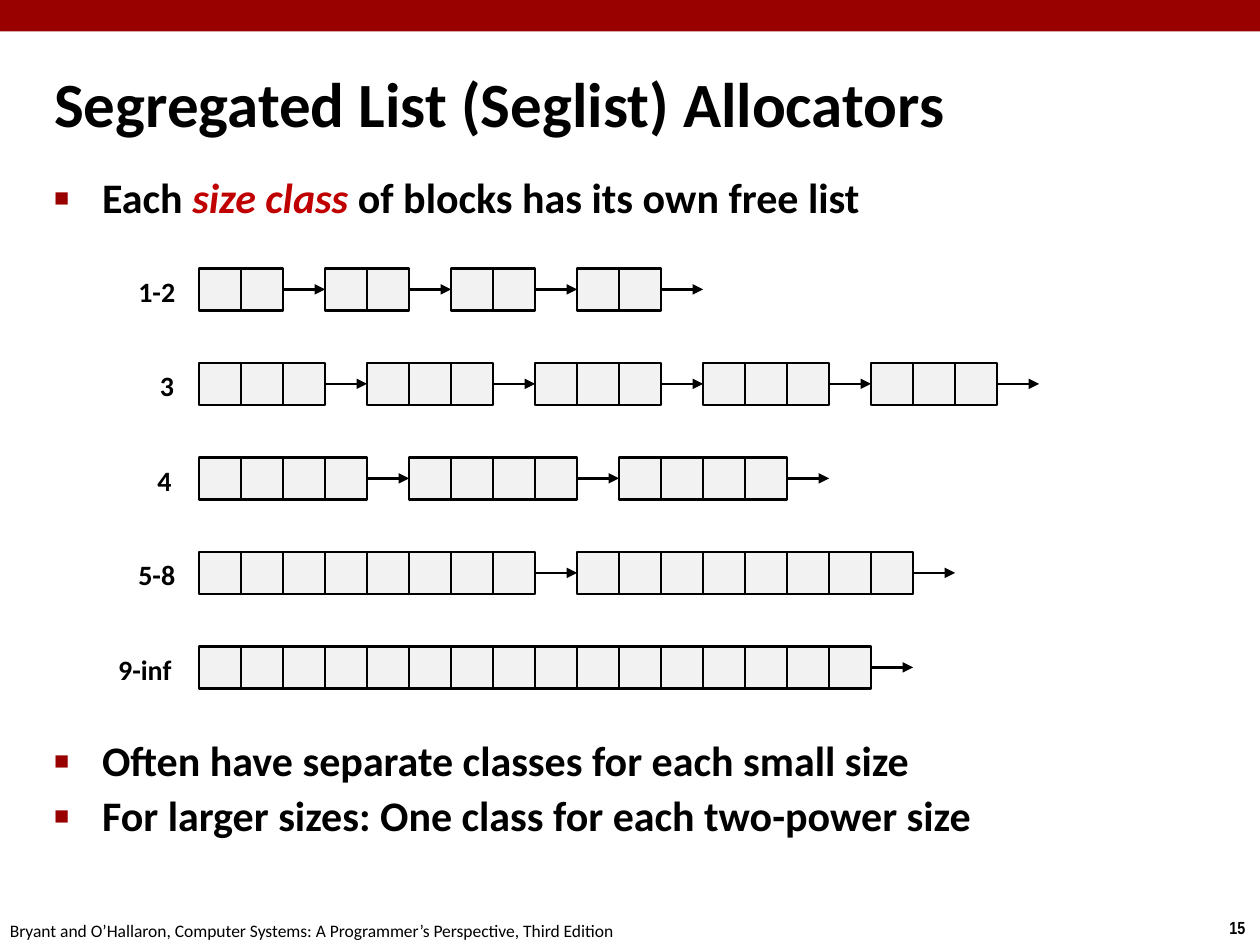
from dataclasses import dataclass

from lxml import etree
from pptx import Presentation
from pptx import util as u
from pptx.dml.color import RGBColor
from pptx.enum import shapes, text
from pptx.oxml import ns

BLACK = RGBColor(0x00, 0x00, 0x00)
MAROON = RGBColor(0x99, 0x00, 0x00)
RED = RGBColor(0xC0, 0x00, 0x00)
GRAY = RGBColor(0xF2, 0xF2, 0xF2)

CELL = u.Inches(1) // 3
LEFT = u.Inches(1.58)
TOP = u.Inches(2.13)
PITCH = u.Inches(0.75)

HEAD = {"name": "Calibri", "size": u.Pt(36), "bold": True}
LIST = {"name": "Calibri", "size": u.Pt(24), "bold": True}
TAG = {"name": "Calibri", "size": u.Pt(16), "bold": True}
FOOT = {"name": "Calibri", "size": u.Pt(10), "bold": False}
PAGE = {"name": "Arial Narrow", "size": u.Pt(10), "bold": True}


@dataclass
class Chain:
    name: str
    left: float
    width: float
    cells: int
    blocks: int


@dataclass
class Point:
    runs: list[str]
    before: float


CHAINS = [
    Chain("1-2", 1, 0.5, 2, 4),
    Chain("3", 1.17, 0.32, 3, 5),
    Chain("4", 1.15, 0.32, 4, 3),
    Chain("5-8", 1, 0.5, 8, 2),
    Chain("9-inf", 0.84, 0.63, 16, 1),
]

POINTS = [
    Point(["Each ", "size class ", "of blocks has its own free list"], 4),
    Point(["Often have separate classes for each small size"], 294.5),
    Point(["For larger sizes: One class for each two-power size"], 4),
]


def style(item, form: dict) -> None:
    for key, value in form.items():
        setattr(item, key, value)


def write(para, words: str, form: dict, color: RGBColor = BLACK) -> None:
    run = para.add_run()
    run.text = words
    style(run.font, form)
    run.font.color.rgb = color


def place(item, left: float, top: float, width: float, height: float) -> None:
    box = {"left": left, "top": top, "width": width, "height": height}
    style(item, {key: u.Inches(value) for key, value in box.items()})


def label(slide, words: str, left: float, top: int, width: float,
          height: float, form: dict) -> None:
    box = slide.shapes.add_textbox(
        u.Inches(left), top, u.Inches(width), u.Inches(height))
    box.text_frame.word_wrap = False
    write(box.text_frame.paragraphs[0], words, form)


def bullet(para) -> None:
    props = para._p.get_or_add_pPr()
    props.set("marL", str(u.Inches(0.38)))
    props.set("indent", str(-u.Inches(0.38)))
    tint = etree.SubElement(props, ns.qn("a:buClr"))
    etree.SubElement(tint, ns.qn("a:srgbClr"), val=str(MAROON))
    etree.SubElement(props, ns.qn("a:buSzPct"), val="60000")
    etree.SubElement(props, ns.qn("a:buFont"), typeface="Arial")
    etree.SubElement(props, ns.qn("a:buChar"), char="■")


def rect(slide, left: int, top: int, width: int, height: int, fill: RGBColor):
    item = slide.shapes.add_shape(
        shapes.MSO_SHAPE.RECTANGLE, left, top, width, height)
    item.shadow.inherit = False
    item.fill.solid()
    item.fill.fore_color.rgb = fill
    item.line.fill.background()
    return item


def cell(slide, left: int, top: int):
    item = rect(slide, left, top, CELL, CELL, GRAY)
    item.line.color.rgb = BLACK
    item.line.width = u.Pt(1.5)
    return item


def arrow(slide, start, end=None) -> None:
    left = start.left + CELL
    mid = start.top + CELL // 2
    item = slide.shapes.add_connector(
        shapes.MSO_CONNECTOR.STRAIGHT, left, mid, left + CELL, mid)
    item.begin_connect(start, 3)
    if end is not None:
        item.end_connect(end, 1)
    item.line.color.rgb = BLACK
    item.line.width = u.Pt(1.5)
    etree.SubElement(item.line._get_or_add_ln(), ns.qn("a:tailEnd"),
                     type="triangle")
    etree.SubElement(item._element.spPr, ns.qn("a:effectLst"))


def draw(slide, chain: Chain, top: int) -> None:
    label(slide, chain.name, chain.left, top, chain.width, 0.37, TAG)
    last = None
    for block in range(chain.blocks):
        left = LEFT + block * (chain.cells + 1) * CELL
        row = [cell(slide, left + n * CELL, top) for n in range(chain.cells)]
        if last is not None:
            arrow(slide, last, row[0])
        last = row[-1]
    arrow(slide, last)


def title(slide) -> None:
    item = slide.shapes.title
    place(item, 0.33, 0.54, 9, 0.63)
    style(item.text_frame, {"vertical_anchor": text.MSO_ANCHOR.MIDDLE,
                            "auto_size": text.MSO_AUTO_SIZE.NONE})
    para = item.text_frame.paragraphs[0]
    style(para, {"alignment": text.PP_ALIGN.LEFT, "line_spacing": 0.87})
    write(para, "Segregated List (Seglist) Allocators", HEAD)


def body(slide) -> None:
    item = slide.placeholders[1]
    place(item, 0.33, 1.34, 9.09, 5.75)
    frame = item.text_frame
    frame.auto_size = text.MSO_AUTO_SIZE.NONE
    for n, point in enumerate(POINTS):
        para = frame.add_paragraph() if n else frame.paragraphs[0]
        style(para, {"line_spacing": 0.95, "space_before": u.Pt(point.before)})
        bullet(para)
        for k, words in enumerate(point.runs):
            mark = k == 1
            write(para, words, LIST | {"italic": mark}, RED if mark else BLACK)


def main() -> None:
    deck = Presentation()
    style(deck, {"slide_width": u.Inches(10), "slide_height": u.Inches(7.5)})
    slide = deck.slides.add_slide(deck.slide_layouts[1])
    rect(slide, 0, 0, deck.slide_width, u.Inches(0.25), MAROON)
    title(slide)
    body(slide)
    for n, chain in enumerate(CHAINS):
        draw(slide, chain, TOP + n * PITCH)
    label(slide, "15", 9.66, u.Inches(7.23), 0.34, 0.27, PAGE)
    label(slide, "Bryant and O’Hallaron, Computer Systems: "
          "A Programmer’s Perspective, Third Edition",
          -0.02, u.Inches(7.25), 5.08, 0.27, FOOT)
    deck.save("out.pptx")


if __name__ == "__main__":
    main()
